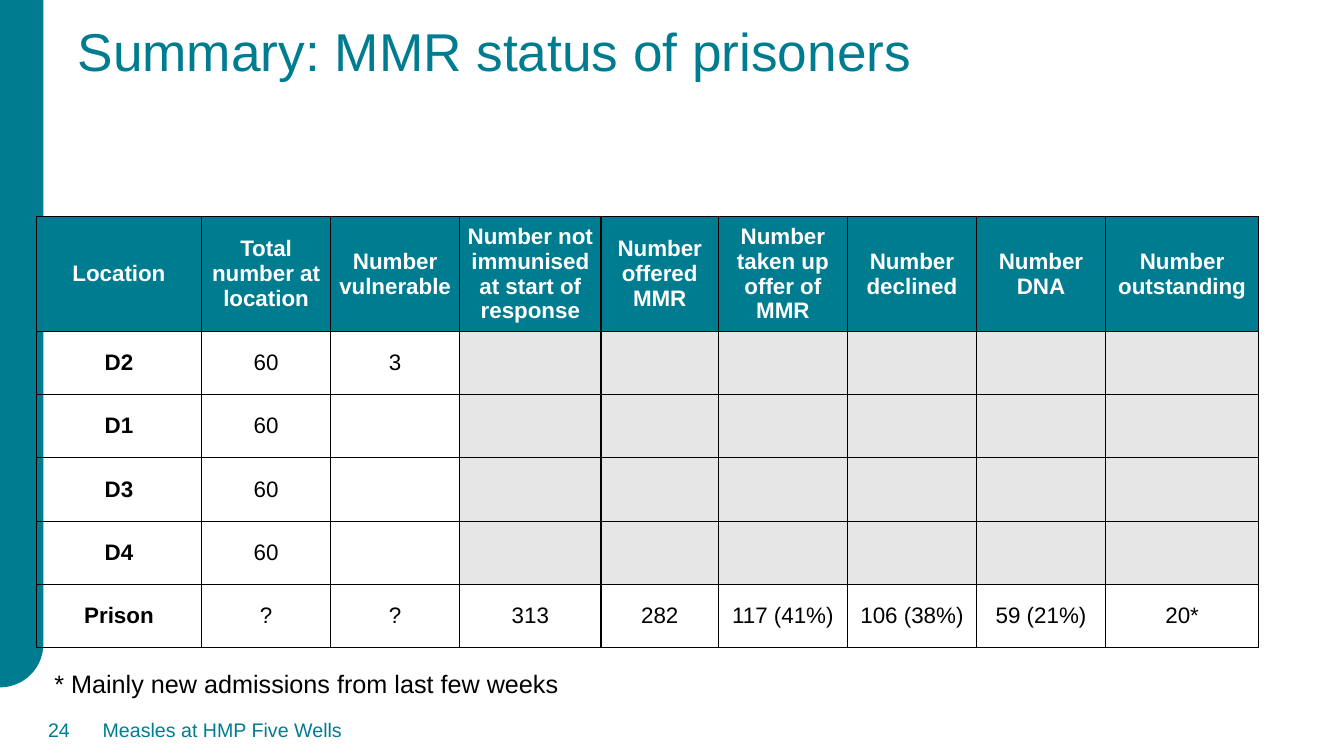
import dataclasses
import math

import pptx
import pptx.dml.color
import pptx.enum.text
import pptx.oxml
import pptx.oxml.ns
import pptx.util

Pt = pptx.util.Pt
Align = pptx.enum.text.PP_ALIGN
Anchor = pptx.enum.text.MSO_ANCHOR


@dataclasses.dataclass(frozen=True)
class Theme:
    font: str = "Arial"
    teal: str = "007C91"
    grey: str = "E7E6E6"
    white: str = "FFFFFF"
    black: str = "000000"
    title: int = 38
    note: int = 18
    cell: int = 16
    foot: int = 14


THEME = Theme()

HEADS = ["Location", "Total number at location", "Number vulnerable",
         "Number not immunised at start of response", "Number offered MMR",
         "Number taken up offer of MMR", "Number declined", "Number DNA",
         "Number outstanding"]
# None marks a greyed-out cell
BLANK = [None] * 6
ROWS = [
    HEADS,
    ["D2", "60", "3"] + BLANK,
    ["D1", "60", ""] + BLANK,
    ["D3", "60", ""] + BLANK,
    ["D4", "60", ""] + BLANK,
    ["Prison", "?", "?", "313", "282", "117 (41%)", "106 (38%)", "59 (21%)", "20*"],
]
WIDTHS = [118, 92.2, 92.2, 101, 83.8, 92.2, 92.2, 92.2, 109.4]
HEAD_HIGH, ROW_HIGH = 82.1, 45.2


def color(code):
    return pptx.dml.color.RGBColor.from_string(code)


def write(frame, text, size, code, bold=False, align=Align.LEFT):
    frame.text = text
    line = frame.paragraphs[0]
    line.alignment = align
    for run in line.runs:
        run.font.name = THEME.font
        run.font.size = Pt(size)
        run.font.bold = bold
        run.font.color.rgb = color(code)


def add_label(slide, box, text, size, code, align=Align.LEFT, anchor=Anchor.TOP):
    frame = slide.shapes.add_textbox(*map(Pt, box)).text_frame
    frame.word_wrap = True
    frame.vertical_anchor = anchor
    write(frame, text, size, code, align=align)


def add_title(slide, text):
    title = slide.shapes.title
    title.left, title.top, title.width, title.height = map(Pt, (48.2, 14.4, 876, 76))
    frame = title.text_frame
    write(frame, text, THEME.title, THEME.teal)
    frame.vertical_anchor = Anchor.TOP
    frame.paragraphs[0].line_spacing = 0.9


def add_band(slide, width, high):
    """Side band with a rounded lower right corner."""
    turn = [math.radians(step * 5) for step in range(19)]
    curve = [(Pt(width * math.cos(a)), Pt(high - width + width * math.sin(a)))
             for a in turn]
    path = slide.shapes.build_freeform(0, 0)
    path.add_line_segments([(Pt(width), 0)] + curve, close=True)
    band = path.convert_to_shape()
    band.shadow.inherit = False
    band.fill.solid()
    band.fill.fore_color.rgb = color(THEME.teal)
    band.line.fill.background()


def add_edges(cell):
    props = cell._tc.get_or_add_tcPr()
    for place, side in enumerate(("lnL", "lnR", "lnT", "lnB")):
        props.insert(place, pptx.oxml.parse_xml(
            f'<a:{side} {pptx.oxml.ns.nsdecls("a")} w="{Pt(1)}"><a:solidFill>'
            f'<a:srgbClr val="{THEME.black}"/></a:solidFill></a:{side}>'))


def fill_cell(cell, text, head, first):
    cell.margin_left = cell.margin_right = Pt(5)
    cell.margin_top = cell.margin_bottom = 0
    cell.vertical_anchor = Anchor.MIDDLE
    shade = THEME.teal if head else THEME.grey if text is None else None
    if shade:
        cell.fill.solid()
        cell.fill.fore_color.rgb = color(shade)
    else:
        cell.fill.background()
    if text:
        write(cell.text_frame, text, THEME.cell, THEME.white if head else THEME.black,
              bold=head or first, align=Align.CENTER)
    add_edges(cell)


def add_grid(slide, left, top):
    highs = [HEAD_HIGH] + [ROW_HIGH] * (len(ROWS) - 1)
    table = slide.shapes.add_table(len(ROWS), len(WIDTHS), Pt(left), Pt(top),
                                   Pt(sum(WIDTHS)), Pt(sum(highs))).table
    table.first_row = table.horz_banding = False
    for column, width in zip(table.columns, WIDTHS):
        column.width = Pt(width)
    for r, (row, high) in enumerate(zip(ROWS, highs)):
        table.rows[r].height = Pt(high)
        for c, text in enumerate(row):
            fill_cell(table.cell(r, c), text, r == 0, c == 0)


def main():
    deck = pptx.Presentation()
    deck.slide_width, deck.slide_height = Pt(960), Pt(540)
    slide = deck.slides.add_slide(deck.slide_layouts[5])

    # Side band and title
    add_band(slide, 31, 491)
    add_title(slide, "Summary: MMR status of prisoners")

    # Footer
    add_label(slide, (66.2, 507, 788, 29), "Measles at HMP Five Wells",
              THEME.foot, THEME.teal, anchor=Anchor.MIDDLE)
    add_label(slide, (10, 507, 47, 29), "24", THEME.foot, THEME.teal,
              align=Align.RIGHT, anchor=Anchor.MIDDLE)

    # Table and its note
    add_grid(slide, 26, 154.6)
    add_label(slide, (31.7, 474, 666, 29), "* Mainly new admissions from last few weeks",
              THEME.note, THEME.black)

    deck.save("out.pptx")


if __name__ == "__main__":
    main()
